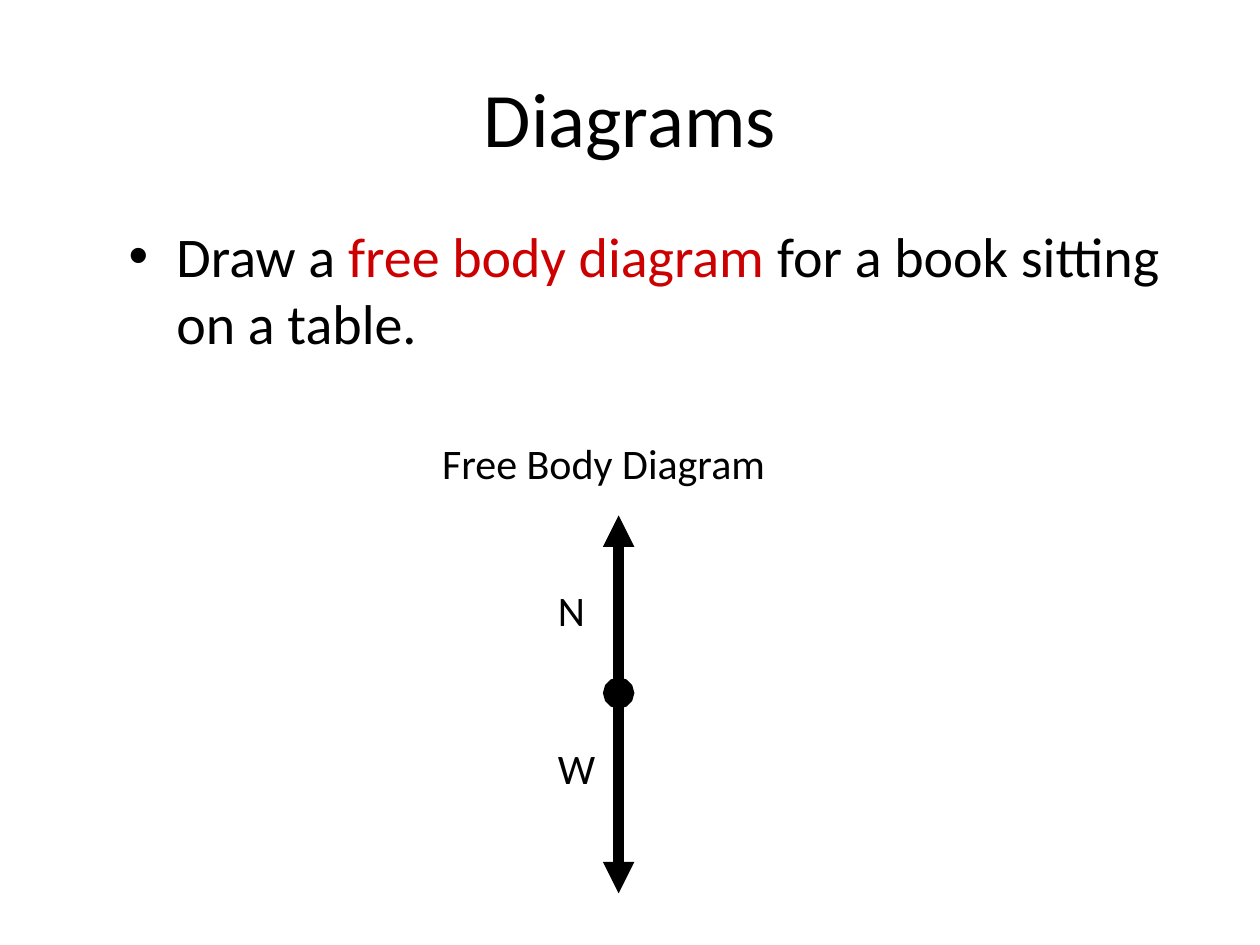
from lxml import etree
from pptx import Presentation
from pptx import util as u
from pptx.dml.color import RGBColor
from pptx.enum import shapes, text
from pptx.oxml.ns import qn

FONT = "Calibri"
COLORS = {"ink": "000000", "accent": "CC0000", "paper": "FFFFFF"}


def color(name):
    return RGBColor.from_string(COLORS[name])


def place(shape, left, top, width, height):
    shape.left, shape.top = u.Inches(left), u.Inches(top)
    shape.width, shape.height = u.Inches(width), u.Inches(height)


def style(font, size):
    font.name = FONT
    font.size = u.Pt(size)
    font.color.rgb = color("ink")


def fill_title(shape, words):
    place(shape, 0.5, 0.3, 9, 1.25)
    shape.text_frame.vertical_anchor = text.MSO_ANCHOR.MIDDLE
    paragraph = shape.text_frame.paragraphs[0]
    paragraph.text = words
    paragraph.alignment = text.PP_ALIGN.CENTER
    style(paragraph.font, 44)


def fill_body(shape, parts):
    """Write one bullet from (words, color name) parts."""
    place(shape, 0.92, 1.71, 8.5, 4.5)
    paragraph = shape.text_frame.paragraphs[0]
    for words, color_name in parts:
        run = paragraph.add_run()
        run.text = words
        style(run.font, 32)
        run.font.color.rgb = color(color_name)
    # Hanging indent, relative spacing and bullet
    properties = paragraph._p.get_or_add_pPr()
    properties.set("marL", str(u.Inches(0.38)))
    properties.set("indent", str(u.Inches(-0.38)))
    spacing = etree.SubElement(properties, qn("a:spcBef"))
    etree.SubElement(spacing, qn("a:spcPct"), val="20000")
    etree.SubElement(properties, qn("a:buChar"), char="•")


def add_force(slide, x, start, end, head=None):
    """Draw a vertical arrow, with an optional end mark at its start."""
    force = slide.shapes.add_connector(
        shapes.MSO_CONNECTOR.STRAIGHT,
        u.Inches(x), u.Inches(start), u.Inches(x), u.Inches(end))
    force.line.width = u.Pt(6)
    force.line.color.rgb = color("ink")
    line = force.line._get_or_add_ln()
    if head:
        etree.SubElement(line, qn("a:headEnd"), type=head)
    etree.SubElement(line, qn("a:tailEnd"), type="triangle")
    etree.SubElement(force._element.spPr, qn("a:effectLst"))


def add_label(slide, words, left, top, width):
    label = slide.shapes.add_textbox(
        u.Inches(left), u.Inches(top), u.Inches(width), u.Inches(0.5))
    frame = label.text_frame
    frame.word_wrap = False
    frame.auto_size = text.MSO_AUTO_SIZE.SHAPE_TO_FIT_TEXT
    paragraph = frame.paragraphs[0]
    paragraph.text = words
    style(paragraph.font, 24)


def main():
    presentation = Presentation()
    presentation.slide_width = u.Inches(10)
    presentation.slide_height = u.Inches(7.5)
    slide = presentation.slides.add_slide(presentation.slide_layouts[1])
    slide.background.fill.solid()
    slide.background.fill.fore_color.rgb = color("paper")

    # Title and task
    fill_title(slide.shapes.title, "Diagrams")
    fill_body(slide.placeholders[1], [
        ("Draw a ", "ink"),
        ("free body diagram", "accent"),
        (" for a book sitting on a table.", "ink"),
    ])

    # Normal force up from the body, weight down
    add_force(slide, 4.91, 5.5, 4.09, head="oval")
    add_force(slide, 4.91, 5.59, 7.09)

    # Labels
    add_label(slide, "N", 4.33, 4.59, 0.47)
    add_label(slide, "W", 4.33, 5.84, 0.55)
    add_label(slide, "Free Body Diagram", 3.41, 3.42, 3.15)

    presentation.save("out.pptx")


if __name__ == "__main__":
    main()
